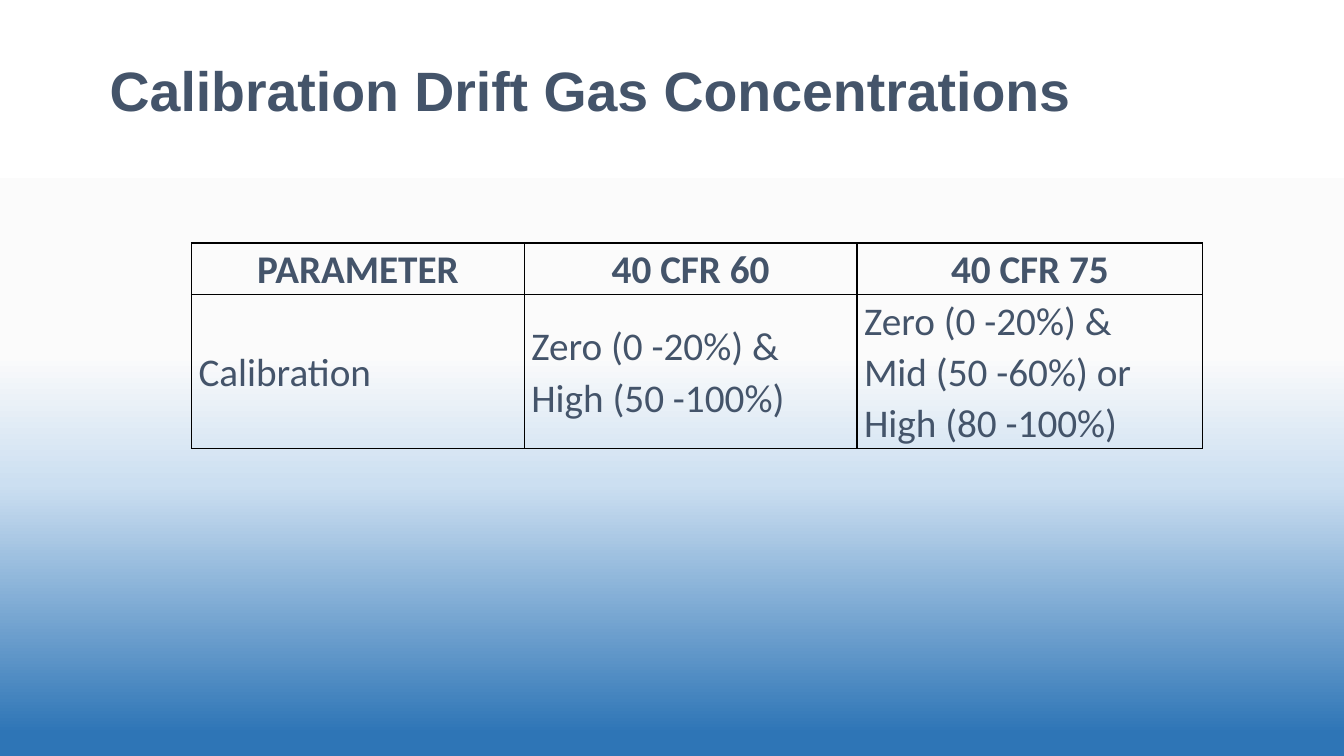
from lxml import etree
from pptx import Presentation
from pptx.dml.color import RGBColor
from pptx.enum.text import MSO_ANCHOR, PP_ALIGN
from pptx.oxml.ns import qn
from pptx.util import Inches, Pt

CENTER, LEFT = PP_ALIGN.CENTER, PP_ALIGN.LEFT
MIDDLE, TOP = MSO_ANCHOR.MIDDLE, MSO_ANCHOR.TOP
TITLE_ONLY = 5

COLORS = {"text": "44546A", "border": "000000"}
# Background stops: percent from the top, colour
BACKGROUND_STOPS = [(0, "FFFFFF"), (47, "FBFBFB"), (64, "CCDFF1"), (97, "2E75B6")]

TITLE_BOX = (0.71, 0.5, 10.29, 0.86)
TABLE_BOX = (1.9, 2.41, 10.03, 2.03)
COLUMN_WIDTHS = [3.3, 3.3, 3.43]
LINE_HEIGHT = 0.51
ROWS = [
    ["PARAMETER", "40 CFR 60", "40 CFR 75"],
    [
        "Calibration",
        "Zero (0 -20%) &\nHigh (50 -100%)",
        "Zero (0 -20%) &\nMid (50 -60%) or\nHigh (80 -100%)",
    ],
]


def format_text(text_frame, font_name, size, bold, alignment, spacing):
    for paragraph in text_frame.paragraphs:
        paragraph.alignment = alignment
        paragraph.line_spacing = spacing
        for run in paragraph.runs:
            run.font.name = font_name
            run.font.size = Pt(size)
            run.font.bold = bold
            run.font.color.rgb = RGBColor.from_string(COLORS["text"])


def paint_background(slide):
    fill = slide.background.fill
    fill.gradient()
    fill.gradient_angle = 270  # counted anticlockwise: runs top to bottom
    stop_list = next(slide.element.iter(qn("a:gsLst")))
    for stop in list(stop_list):
        stop_list.remove(stop)
    for percent, color in BACKGROUND_STOPS:
        stop = etree.SubElement(stop_list, qn("a:gs"), pos=str(percent * 1000))
        etree.SubElement(stop, qn("a:srgbClr"), val=color)


def place_title(slide, box, text):
    title = slide.shapes.title
    title.left, title.top, title.width, title.height = map(Inches, box)
    title.text_frame.text = text
    title.text_frame.vertical_anchor = MIDDLE
    format_text(title.text_frame, "Arial", 39.6, True, CENTER, 0.9)


def add_borders(cell):
    properties = cell._tc.get_or_add_tcPr()
    for index, side in enumerate(("lnL", "lnR", "lnT", "lnB")):
        line = etree.Element(qn(f"a:{side}"), w=str(Pt(1)))
        fill = etree.SubElement(line, qn("a:solidFill"))
        etree.SubElement(fill, qn("a:srgbClr"), val=COLORS["border"])
        properties.insert(index, line)  # borders come before the fill


def add_concentration_table(slide, box):
    frame = slide.shapes.add_table(len(ROWS), len(COLUMN_WIDTHS), *map(Inches, box))
    table = frame.table
    table.first_row = table.horz_banding = False
    for column, width in zip(table.columns, COLUMN_WIDTHS):
        column.width = Inches(width)

    for row_index, texts in enumerate(ROWS):
        header = row_index == 0
        line_count = max(len(text.split("\n")) for text in texts)
        table.rows[row_index].height = Inches(LINE_HEIGHT * line_count)
        for column_index, text in enumerate(texts):
            cell = table.cell(row_index, column_index)
            cell.text_frame.text = text
            cell.vertical_anchor = TOP if header else MIDDLE
            cell.margin_left = cell.margin_right = Inches(0.07)
            cell.margin_top = cell.margin_bottom = 0
            cell.fill.background()
            add_borders(cell)
            format_text(cell.text_frame, "Calibri", 28, header,
                        CENTER if header else LEFT, 1.07)


def main():
    presentation = Presentation()
    presentation.slide_width = Inches(13.33)
    presentation.slide_height = Inches(7.5)
    slide = presentation.slides.add_slide(presentation.slide_layouts[TITLE_ONLY])
    paint_background(slide)
    place_title(slide, TITLE_BOX, "Calibration Drift Gas Concentrations")
    add_concentration_table(slide, TABLE_BOX)
    presentation.save("out.pptx")


if __name__ == "__main__":
    main()
